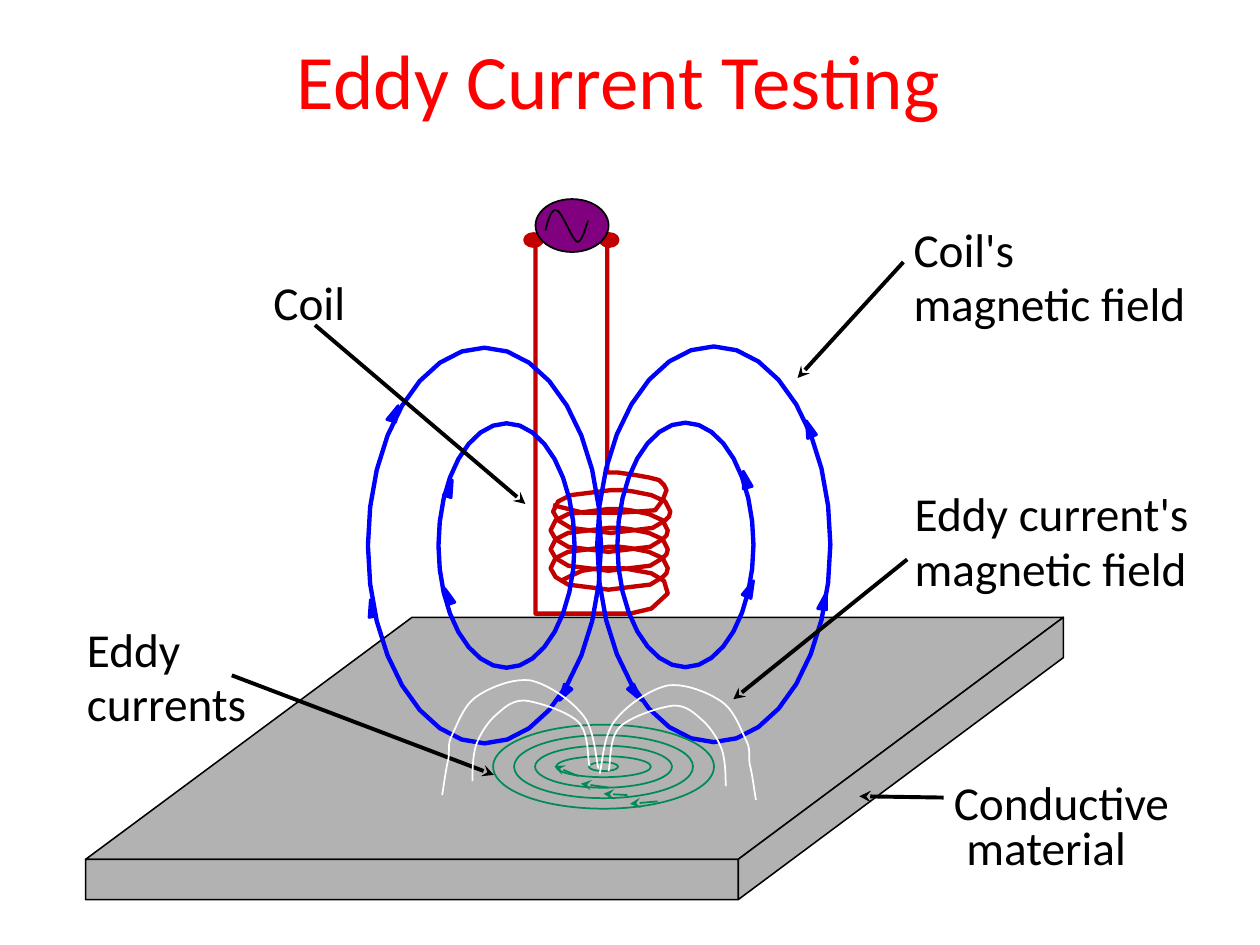
from math import cos, pi, sin

from lxml.etree import SubElement
from pptx import Presentation
from pptx.dml.color import RGBColor
from pptx.enum.shapes import MSO_CONNECTOR, MSO_SHAPE
from pptx.enum.text import MSO_ANCHOR, MSO_AUTO_SIZE, PP_ALIGN
from pptx.oxml.ns import qn
from pptx.util import Inches, Pt

# All positions are columns and rows of a grid, 1000 columns by 750 rows.
SLIDE_WIDTH, SLIDE_HEIGHT = Inches(10), Inches(7.5)
CELL = SLIDE_WIDTH // 1000

BLACK, WHITE, TITLE_RED = "000000", "FFFFFF", "FF0000"
SLAB_GREY, COIL_RED, SOURCE_PURPLE = "B2B2B2", "C20000", "800080"
FIELD_BLUE, EDDY_GREEN = "0000FF", "008A55"

LABELS = [
    (217, 217, "Coil"),
    (725, 175, "Coil's"), (725, 218, "magnetic field"),
    (69, 492, "Eddy"), (69, 535, "currents"),
    (726, 384, "Eddy current's"), (726, 428, "magnetic field"),
]
POINTERS = [
    ((184, 536), (392, 615)), ((250, 258), (417, 400)), ((717, 208), (633, 300)),
    ((749, 633), (682, 632)), ((720, 444), (582, 555)),
]
EDDY_ARROWS = [
    ((522, 636), (500, 638)), ((498, 631), (479, 630)),
    ((483, 625), (461, 622)), ((459, 616), (440, 608)),
]
COIL_TURN = [
    (0, 17), (4, 9), (14, 4), (46, 0), (51, 0), (55, 0), (63, 1), (78, 4), (89, 9),
    (93, 17), (92, 21), (89, 24), (79, 30), (46, 34), (14, 30), (4, 24), (0, 17),
]
TURN_CORNERS = [(437, 404), (437, 419), (437, 434), (439, 389)]
LOWER_LEAD = [
    (445, 461), (453, 457), (462, 453), (475, 451), (495, 451), (517, 455), (527, 461),
    (530, 471), (517, 483), (500, 487), (478, 487), (425, 487), (425, 192),
]
UPPER_LEAD = [
    (439, 401), (463, 407), (477, 407), (490, 407), (507, 406), (520, 405), (526, 397),
    (529, 389), (527, 385), (523, 381), (515, 379), (504, 377), (490, 375), (482, 375),
    (482, 194),
]
# Centre and radii of each loop
FIELD_LOOPS = [
    (384.5, 433, 92.5, 157), (566.5, 432, 92.5, 157),
    (402, 433, 54, 97), (544, 432.5, 54, 97),
]
FIELD_HEADS = [
    [(307, 333), (316, 322), (314, 335)], [(454, 547), (444, 556), (448, 543)],
    [(293, 490), (294, 476), (299, 489)], [(503, 543), (509, 556), (498, 547)],
    [(649, 483), (656, 470), (656, 484)], [(641, 348), (640, 334), (648, 345)],
    [(589, 472), (598, 461), (596, 475)], [(590, 388), (590, 374), (597, 386)],
    [(352, 393), (359, 381), (358, 395)], [(355, 480), (353, 467), (361, 478)],
]
SINE_WAVE = [
    (433, 183), (435, 174), (438, 165), (442, 167), (446, 168), (454, 190), (458, 192),
    (462, 193), (465, 179), (467, 175),
]
EDDY_FIELD = [
    [(476, 614), (478, 607), (479, 583), (488, 572), (497, 560), (516, 547), (530, 544),
     (544, 542), (563, 550), (573, 557), (583, 564), (588, 579), (592, 587),
     (596, 595), (594, 598), (595, 606), (597, 614), (599, 629), (600, 635)],
    [(483, 612), (485, 606), (483, 586), (492, 577), (500, 569), (524, 561), (535, 560),
     (546, 560), (552, 567), (559, 573), (565, 579), (570, 587), (573, 595),
     (576, 604), (576, 618), (576, 624)],
]


def cells(count):
    return round(count * CELL)


def color(hex_string):
    return RGBColor.from_string(hex_string)


def paint(shape, line, weight, fill=None):
    shape.shadow.inherit = False
    shape.line.color.rgb = color(line)
    shape.line.width = Pt(weight)
    if fill:
        shape.fill.solid()
        shape.fill.fore_color.rgb = color(fill)
    else:
        shape.fill.background()


def add_outline(slide, points, line, weight, fill=None, close=False):
    start, *rest = [(cells(x), cells(y)) for x, y in points]
    builder = slide.shapes.build_freeform(*start, scale=1.0)
    builder.add_line_segments(rest, close=close)
    paint(builder.convert_to_shape(), line, weight, fill)


def add_ellipse(slide, center, size, line, weight, fill=None):
    (x, y), (width, height) = center, size
    ellipse = slide.shapes.add_shape(
        MSO_SHAPE.OVAL, cells(x - width / 2), cells(y - height / 2),
        cells(width), cells(height))
    paint(ellipse, line, weight, fill)


def add_arrow(slide, start, end, line, weight):
    arrow = slide.shapes.add_connector(
        MSO_CONNECTOR.STRAIGHT, *[cells(value) for value in (*start, *end)])
    arrow.line.color.rgb = color(line)
    arrow.line.width = Pt(weight)
    SubElement(arrow.line._get_or_add_ln(), qn("a:tailEnd"), type="stealth")
    SubElement(arrow._element.spPr, qn("a:effectLst"))


def add_label(slide, left, top, text, width=231, height=45):
    frame = slide.shapes.add_textbox(
        cells(left), cells(top), cells(width), cells(height)).text_frame
    frame.margin_left = frame.margin_right = frame.margin_top = frame.margin_bottom = 0
    frame.word_wrap = False
    frame.auto_size = MSO_AUTO_SIZE.SHAPE_TO_FIT_TEXT
    frame.text = text
    for paragraph in frame.paragraphs:
        format_font(paragraph.runs[0].font, 27, BLACK)
    return frame


def format_font(font, size, hex_string):
    font.name = "Calibri"
    font.size = Pt(size)
    font.color.rgb = color(hex_string)


def loop_points(x, y, radius_x, radius_y, steps=32):
    angles = [2 * pi * step / steps for step in range(steps + 1)]
    return [(x - radius_x * cos(a), y - radius_y * sin(a)) for a in angles]


def curve_points(controls, steps=10):
    """Sample a chain of cubic Bézier segments that share their end points."""
    points = [controls[0]]
    for first in range(0, len(controls) - 1, 3):
        segment = controls[first:first + 4]
        for step in range(1, steps + 1):
            t = step / steps
            weights = ((1 - t) ** 3, 3 * t * (1 - t) ** 2, 3 * t * t * (1 - t), t ** 3)
            points.append(tuple(
                sum(w * value for w, value in zip(weights, axis))
                for axis in zip(*segment)))
    return points


def add_title(slide):
    title = slide.shapes.title
    title.left, title.top = cells(73), 0
    title.width, title.height = cells(836), cells(125)
    title.text_frame.text = "Eddy Current Testing"
    title.text_frame.vertical_anchor = MSO_ANCHOR.MIDDLE
    heading = title.text_frame.paragraphs[0]
    heading.alignment = PP_ALIGN.CENTER
    format_font(heading.runs[0].font, 44, TITLE_RED)


def add_labels(slide):
    material = add_label(slide, 757, 622, "Conductive\nmaterial", 188, 72)
    for paragraph in material.paragraphs:
        paragraph.line_spacing = 0.8
    material.paragraphs[1]._p.get_or_add_pPr().set("marL", str(cells(10)))
    for left, top, text in LABELS:
        add_label(slide, left, top, text)


def add_slab(slide):
    front_left, back_left, back_right, front_right = (
        (68, 682), (327, 490), (844, 490), (586, 682))
    below = [(x, y + 32) for x, y in (front_left, front_right, back_right)]
    top = [front_left, back_left, back_right, front_right]
    sides = [front_left, *below, back_right, front_right, below[1], front_right]
    for face in (top, sides):
        add_outline(slide, face, BLACK, 0.88, SLAB_GREY, close=True)


def add_coil(slide):
    turns = [[(left + x, top + y) for x, y in COIL_TURN] for left, top in TURN_CORNERS]
    for wire in (*turns, LOWER_LEAD, UPPER_LEAD):
        add_outline(slide, wire, COIL_RED, 2.5)
    for x in (483.5, 423.5):
        add_ellipse(slide, (x, 190.5), (13, 9), COIL_RED, 2.5, COIL_RED)


def add_coil_field(slide):
    for loop in FIELD_LOOPS:
        add_outline(slide, loop_points(*loop), FIELD_BLUE, 2.5)
    for head in FIELD_HEADS:
        add_outline(slide, head, FIELD_BLUE, 1.63, FIELD_BLUE, close=True)


def add_source(slide):
    add_ellipse(slide, (454, 179), (58, 42), BLACK, 1, SOURCE_PURPLE)
    add_outline(slide, curve_points(SINE_WAVE), BLACK, 1)


def add_eddy_currents(slide):
    rings = [(42 + 33.33 * n, 16.67 * n) for n in range(1, 5)]
    for size in (*rings, (23, 7)):
        add_ellipse(slide, (479, 608.5), size, EDDY_GREEN, 1)
    for start, end in EDDY_ARROWS:
        add_arrow(slide, start, end, EDDY_GREEN, 1)


def add_eddy_field(slide):
    mirrored = [[(951 - x, y - 4) for x, y in arc] for arc in EDDY_FIELD]
    for arc in EDDY_FIELD + mirrored:
        add_outline(slide, curve_points(arc), WHITE, 1)


def main():
    deck = Presentation()
    deck.slide_width, deck.slide_height = SLIDE_WIDTH, SLIDE_HEIGHT
    slide = deck.slides.add_slide(deck.slide_layouts.get_by_name("Title Only"))
    add_title(slide)
    add_slab(slide)
    add_labels(slide)
    add_coil(slide)
    add_coil_field(slide)
    add_source(slide)
    for start, end in POINTERS:
        add_arrow(slide, start, end, BLACK, 2.25)
    add_eddy_currents(slide)
    add_eddy_field(slide)
    deck.save("out.pptx")


if __name__ == "__main__":
    main()
